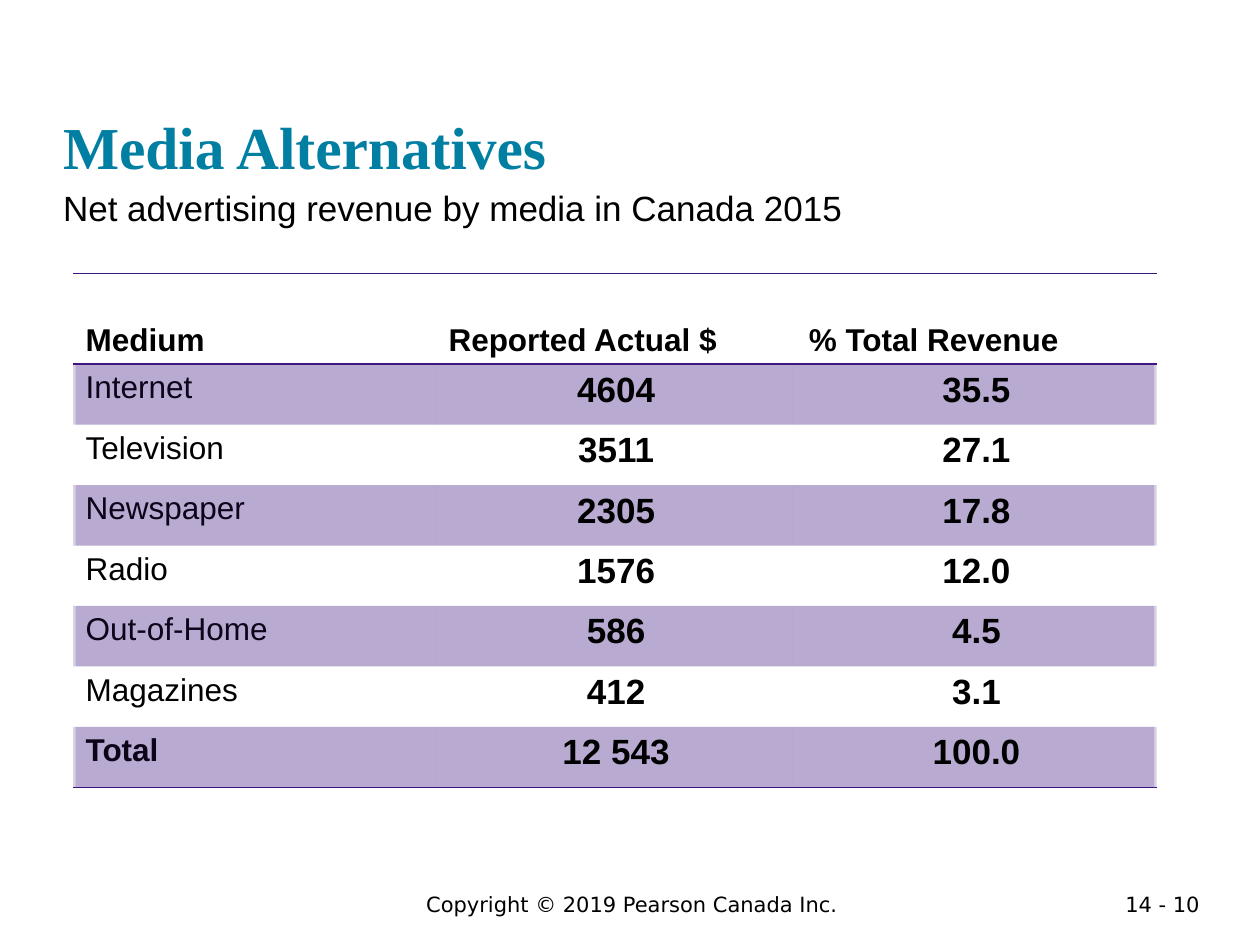
"""Build a slide with a table of net advertising revenue by medium."""
import dataclasses

import pptx
import pptx.dml.color
import pptx.enum.text
import pptx.oxml
import pptx.oxml.ns
import pptx.util

Inches = pptx.util.Inches
ANCHOR = pptx.enum.text.MSO_ANCHOR
ALIGN = pptx.enum.text.PP_ALIGN


@dataclasses.dataclass
class Theme:
    teal: str = "007FA3"
    purple: str = "3C1581"
    black: str = "000000"
    title: int = 34
    large: int = 20
    label: int = 18
    footer: int = 12
    serif: str = "Times New Roman"
    sans: str = "Arial"
    small: str = "DejaVu Sans"


theme = Theme()


def write(tf, text, size, font, color=theme.black, bold=False, align=ALIGN.LEFT):
    tf.text = text
    p = tf.paragraphs[0]
    p.alignment = align
    p.space_before = pptx.util.Pt(0)
    r = p.runs[0]
    for name, value in {"size": pptx.util.Pt(size), "name": font, "bold": bold}.items():
        setattr(r.font, name, value)
    r.font.color.rgb = pptx.dml.color.RGBColor.from_string(color)
    return p


def add_border(cell, side):
    ln = pptx.oxml.parse_xml(
        f'<a:{side} {pptx.oxml.ns.nsdecls("a")} w="12700"><a:solidFill>'
        f'<a:srgbClr val="{theme.purple}"/></a:solidFill></a:{side}>'
    )
    cell._tc.get_or_add_tcPr().insert(0, ln)


prs = pptx.Presentation()
prs.slide_width, prs.slide_height = Inches(10), Inches(7.5)
s = prs.slides.add_slide(prs.slide_layouts[1])

title, body = s.shapes.title, s.placeholders[1]
frames = [
    (title, (0.5, 0.24, 9, 1.2), ANCHOR.BOTTOM),
    (body, (0.5, 1.44, 8.67, 0.42), ANCHOR.MIDDLE),
]
for sp, box, anchor in frames:
    sp.left, sp.top, sp.width, sp.height = map(Inches, box)
    frame_format = {
        "margin_left": 0,
        "margin_right": 0,
        "margin_top": 0,
        "margin_bottom": 0,
        "vertical_anchor": anchor,
        "word_wrap": True,
        "auto_size": pptx.enum.text.MSO_AUTO_SIZE.NONE,
    }
    for name, value in frame_format.items():
        setattr(sp.text_frame, name, value)
write(title.text_frame, "Media Alternatives", theme.title, theme.serif, theme.teal, True)
p = write(body.text_frame, "Net advertising revenue by media in Canada 2015", theme.large, theme.sans)
pPr = p._p.get_or_add_pPr()
pPr.set("marL", "0")
pPr.set("indent", "0")
pPr.append(pptx.oxml.parse_xml(f'<a:buNone {pptx.oxml.ns.nsdecls("a")}/>'))

rows = [
    ("Medium", "Reported Actual $", "% Total Revenue"),
    ("Internet", "4604", "35.5"),
    ("Television", "3511", "27.1"),
    ("Newspaper", "2305", "17.8"),
    ("Radio", "1576", "12.0"),
    ("Out-of-Home", "586", "4.5"),
    ("Magazines", "412", "3.1"),
    ("Total", "12 543", "100.0"),
]
last = len(rows) - 1
for left, shown in ((0.58, (0,)), (0.6, (1, 2))):
    sp = s.shapes.add_table(len(rows), 3, Inches(left), Inches(2.17), Inches(8.58), Inches(4.08))
    table = sp.table
    table.first_row = table.horz_banding = False
    style_id = table._tbl.tblPr.find(pptx.oxml.ns.qn("a:tableStyleId"))
    style_id.text = "{2D5ABB26-0587-4C30-8999-92F81FD0307C}"
    for column in table.columns:
        column.width = Inches(2.86)
    for i, values in enumerate(rows):
        table.rows[i].height = Inches(0.48 if i else 0.72)
        for j, text in enumerate(values):
            cell = table.cell(i, j)
            cell.vertical_anchor = ANCHOR.TOP if i else ANCHOR.BOTTOM
            if i % 2:
                cell.fill.solid()
                cell.fill.fore_color.rgb = pptx.dml.color.RGBColor.from_string(theme.purple)
                clr = cell._tc.tcPr.find(".//" + pptx.oxml.ns.qn("a:srgbClr"))
                clr.append(pptx.oxml.parse_xml(f'<a:alpha {pptx.oxml.ns.nsdecls("a")} val="20000"/>'))
            else:
                cell.fill.background()
            if i in (0, last):
                add_border(cell, "lnB")
            if i == 0:
                add_border(cell, "lnT")
            if j in shown:
                number = i > 0 and j > 0
                write(
                    cell.text_frame,
                    text,
                    theme.large if number else theme.label,
                    theme.sans,
                    bold=number or i in (0, last),
                    align=ALIGN.CENTER if number else ALIGN.LEFT,
                )

footers = [
    ("Copyright © 2019 Pearson Canada Inc.", (1.64, 7.03, 6.75, 0.3), ALIGN.CENTER),
    ("14 - 10", (8.62, 7.03, 1, 0.22), ALIGN.RIGHT),
]
for text, box, align in footers:
    tf = s.shapes.add_textbox(*map(Inches, box)).text_frame
    tf.word_wrap = True
    write(tf, text, theme.footer, theme.small, align=align)

prs.save("out.pptx")
